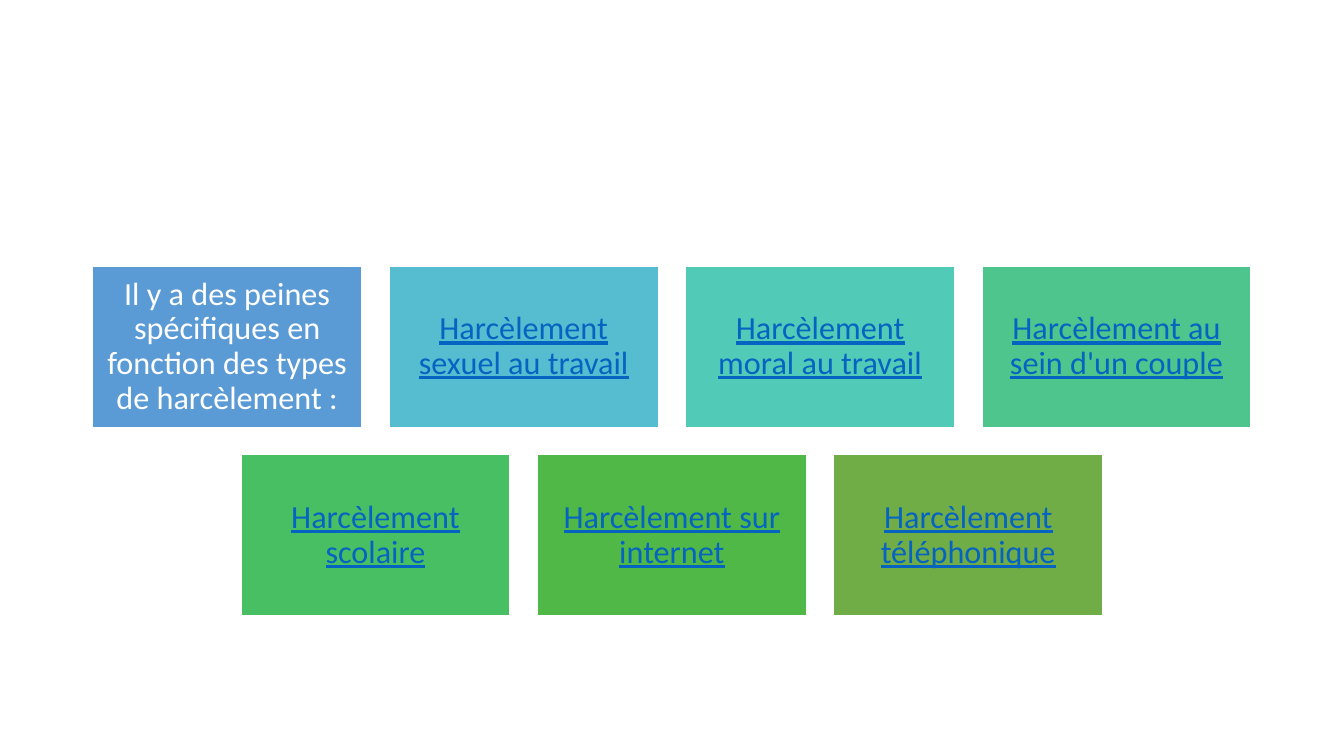
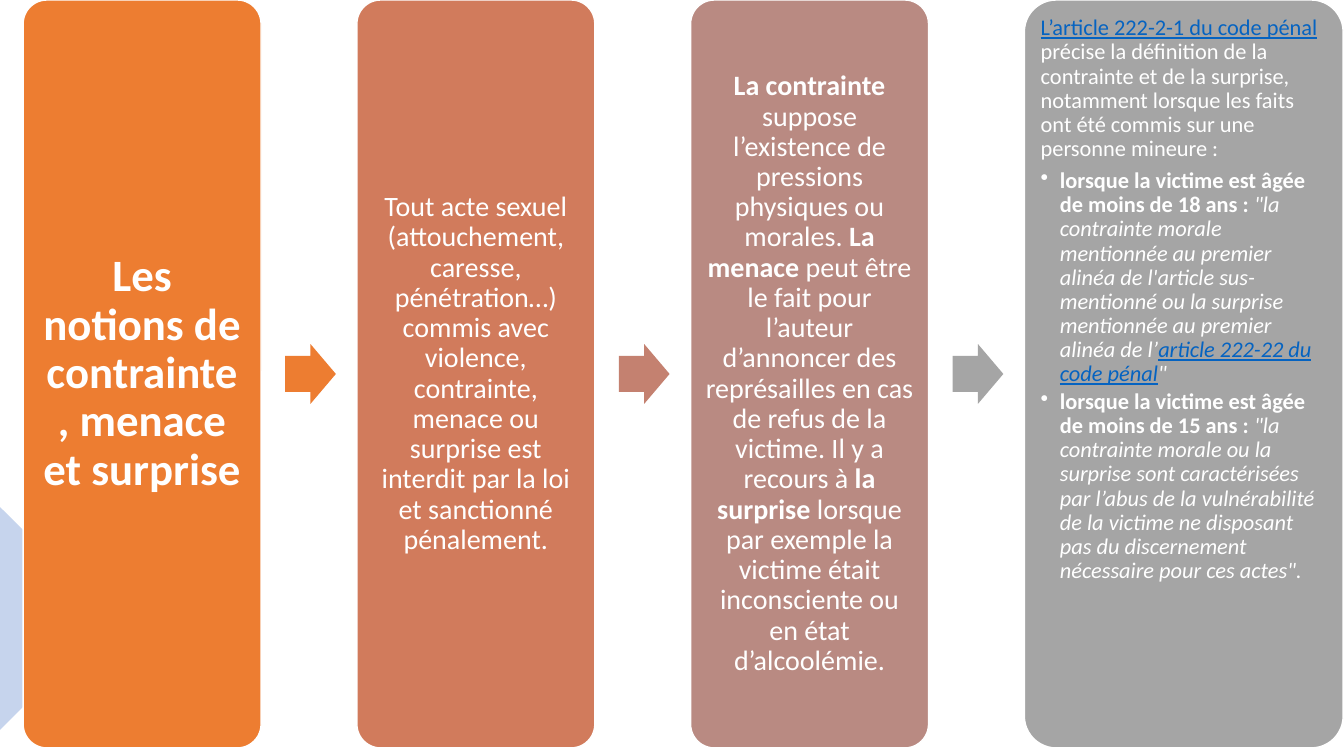
"""Builds two slides on harassment penalties and on the notions of constraint."""
from dataclasses import dataclass

from lxml.etree import SubElement
from pptx import Presentation
from pptx.dml.color import RGBColor
from pptx.enum.shapes import MSO_SHAPE as Form
from pptx.enum.text import MSO_ANCHOR as Anchor, PP_ALIGN as Align
from pptx.oxml.ns import qn
from pptx.util import Inches, Pt


@dataclass(frozen=True)
class Theme:
    font: str = "Calibri"
    text: str = "FFFFFF"
    link: str = "0563C1"
    edge: str = "FFFFFF"
    accent: str = "4472C4"
    tiles: tuple = ("5B9BD5", "56BCD0", "52CAB8", "4DC58D",
                    "49BF64", "50B846", "70AD47")
    panels: tuple = ("ED7D31", "D17B5C", "B98A82", "A5A5A5")
    arrows: tuple = ("ED7D31", "C48170", "A5A5A5")
    heading: int = 32
    tile: int = 23
    body: int = 20
    detail: int = 16
    leading: float = 0.9
    gap_after: float = 0.35
    bullet_gap: float = 0.15
    bullet_indent: float = 0.19


@dataclass(frozen=True)
class Grid:
    left: float
    top: float
    width: float
    height: float
    gap: float

    def cell(self, column, row=0, stretch=1):
        return (self.left + column * (self.width + self.gap),
                self.top + row * (self.height + self.gap),
                self.width * stretch, self.height)

    def between(self, column, width_share, height_share):
        left, top, width, height = self.cell(column)
        tall = height * height_share
        return (left + width + self.gap / 4, top + (height - tall) / 2,
                self.gap * width_share, tall)


class Board:
    def __init__(self, deck, theme):
        self.deck = deck
        self.theme = theme
        self.page = None

    def new_page(self):
        self.page = self.deck.slides.add_slide(self.deck.slide_layouts[6])

    def shape(self, form, area, color):
        shape = self.page.shapes.add_shape(form, *map(Inches, area))
        shape.shadow.inherit = False
        shape.fill.solid()
        shape.fill.fore_color.rgb = RGBColor.from_string(color)
        shape.line.fill.background()
        return shape

    def triangle(self, area, color, opacity):
        shape = self.shape(Form.ISOSCELES_TRIANGLE, area, color)
        shape.rotation = 90
        tint = shape._element.spPr.find(".//" + qn("a:srgbClr"))
        SubElement(tint, qn("a:alpha"), val=str(int(opacity * 100000)))

    def arrow(self, area, color):
        shape = self.shape(Form.RIGHT_ARROW, area, color)
        shape.adjustments[0] = 0.6

    def box(self, form, area, color, paragraphs, size, inset,
            align=Align.CENTER, anchor=Anchor.MIDDLE):
        box = self.shape(form, area, color)
        box.line.color.rgb = RGBColor.from_string(self.theme.edge)
        box.line.width = Pt(1)
        if form == Form.ROUNDED_RECTANGLE:
            box.adjustments[0] = 0.1
        frame = box.text_frame
        frame.word_wrap = True
        frame.vertical_anchor = anchor
        frame.margin_left = frame.margin_right = Inches(inset)
        frame.margin_top = frame.margin_bottom = Inches(inset)
        for index, spans in enumerate(paragraphs):
            para = frame.add_paragraph() if index else frame.paragraphs[0]
            self.paragraph(para, spans, size, align, bullet=index > 0)

    def paragraph(self, para, spans, size, align, bullet):
        theme = self.theme
        para.alignment = align
        para.line_spacing = theme.leading
        share = theme.bullet_gap if bullet else theme.gap_after
        para.space_after = Pt(size * share)
        if bullet:
            indent = Inches(theme.bullet_indent)
            props = para._p.get_or_add_pPr()
            props.set("marL", str(indent))
            props.set("indent", str(-indent))
            SubElement(props, qn("a:buChar"), char="•")
        for text, *marks in spans:
            span = para.add_run()
            span.text = text
            font = span.font
            font.name = theme.font
            font.size = Pt(size)
            font.bold = "bold" in marks
            font.italic = "italic" in marks
            font.underline = "link" in marks
            color = theme.link if "link" in marks else theme.text
            font.color.rgb = RGBColor.from_string(color)


TILES = [
    ("Il y a des peines spécifiques en fonction des types de harcèlement :",),
    ("Harcèlement sexuel au travail", "link"),
    ("Harcèlement moral au travail", "link"),
    ("Harcèlement au sein d'un couple", "link"),
    ("Harcèlement scolaire", "link"),
    ("Harcèlement sur internet", "link"),
    ("Harcèlement téléphonique", "link"),
]

HEADING = [[("Les notions de contrainte, menace et surprise", "bold")]]

RULE = [[("Tout acte sexuel (attouchement, caresse, pénétration…) commis avec "
          "violence, contrainte, menace ou surprise est interdit par la loi "
          "et sanctionné pénalement.",)]]

NOTIONS = [[
    ("La contrainte", "bold"),
    (" suppose l’existence de pressions physiques ou morales. ",),
    ("La menace", "bold"),
    (" peut être le fait pour l’auteur d’annoncer des représailles en cas de "
     "refus de la victime. Il y a recours à",),
    (" la surprise", "bold"),
    (" lorsque par exemple la victime était inconsciente ou en état "
     "d’alcoolémie.",),
]]

ARTICLE = [
    [("L’article 222-2-1 du code pénal", "link"),
     (" précise la définition de la contrainte et de la surprise, notamment "
      "lorsque les faits ont été commis sur une personne mineure :",)],
    [("lorsque la victime est âgée de moins de 18 ans : ", "bold"),
     ("\"la contrainte morale mentionnée au premier alinéa de l'article "
      "sus-mentionné ou la surprise mentionnée au premier alinéa de l’",
      "italic"),
     ("article 222-22 du code pénal", "italic", "link"),
     ("\"", "italic")],
    [("lorsque la victime est âgée de moins de 15 ans : ", "bold"),
     ("\"la contrainte morale ou la surprise sont caractérisées par l’abus de "
      "la vulnérabilité de la victime ne disposant pas du discernement "
      "nécessaire pour ces actes\".", "italic")],
]


def penalties(board):
    theme = board.theme
    grid = Grid(0.92, 2.64, 2.67, 1.6, 0.27)
    board.new_page()
    for index, (span, color) in enumerate(zip(TILES, theme.tiles)):
        row, column = divmod(index, 4)
        area = grid.cell(column + row / 2, row)
        board.box(Form.RECTANGLE, area, color, [[span]], theme.tile, 0.1)


def notions(board):
    theme = board.theme
    grid = Grid(0.23, 0, 2.36, 7.42, 0.95)
    board.new_page()
    board.triangle((-0.55, 5.58, 2.21, 1.11), theme.accent, 0.3)
    panels = [(HEADING, theme.heading, 0.13), (RULE, theme.body, 0.08),
              (NOTIONS, theme.body, 0.08)]
    for column, (paragraphs, size, inset) in enumerate(panels):
        board.box(Form.ROUNDED_RECTANGLE, grid.cell(column),
                  theme.panels[column], paragraphs, size, inset)
        board.arrow(grid.between(column, 0.53, 0.08), theme.arrows[column])
    board.box(Form.ROUNDED_RECTANGLE, grid.cell(3, stretch=1.34),
              theme.panels[3], ARTICLE, theme.detail, 0.07,
              Align.LEFT, Anchor.TOP)


def main():
    deck = Presentation()
    deck.slide_width, deck.slide_height = Inches(13.33), Inches(7.5)
    board = Board(deck, Theme())
    penalties(board)
    notions(board)
    deck.save("out.pptx")


if __name__ == "__main__":
    main()
